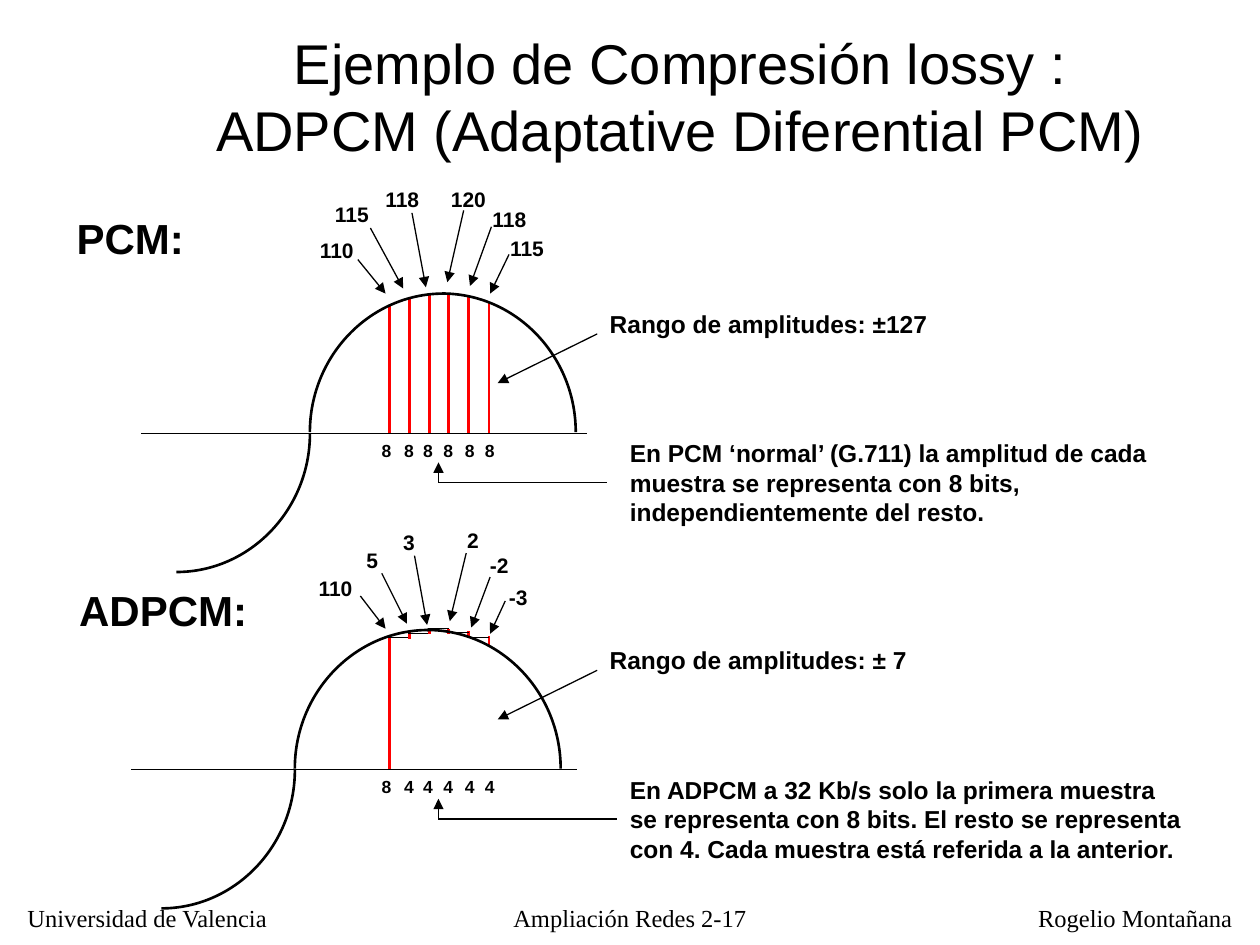
"""Builds a slide that compares PCM and ADPCM sampling."""
from dataclasses import dataclass

from lxml import etree
from pptx import Presentation
from pptx.dml.color import RGBColor
from pptx.enum import shapes, text
from pptx.oxml import ns
from pptx.util import Pt

SCALE = 9144
BLACK = RGBColor(0x00, 0x00, 0x00)
RED = RGBColor(0xFF, 0x00, 0x00)
SANS, SERIF = "Arial", "Times New Roman"
AXIS_Y = 201
SAMPLE_X = [309 + round(15.8 * i) for i in range(6)]
BIT_X = [293, 311, 326, 342, 359, 375]


@dataclass
class Panel:
    """Content of one sampling diagram, in px relative to its box."""
    heading: tuple
    labels: list
    arrows: list
    bars: list
    steps: list
    bits: str
    axis_x: int
    wave_x: int
    callout_end: int
    scope: tuple
    caption: tuple


PCM = Panel(
    heading=("PCM:", 51, 21, 105),
    labels=[("110", 244, 41, 48), ("115", 256, 12, 48), ("118", 296, 0, 48),
            ("120", 348, 0, 48), ("118", 381, 16, 48), ("115", 395, 39, 48)],
    arrows=[(284, 63, 306, 90), (294, 38, 320, 86), (327, 26, 338, 85),
            (368, 24, 355, 81), (390, 37, 373, 84), (404, 59, 389, 90)],
    bars=[(AXIS_Y, top) for top in (100, 93, 91, 91, 93, 97)],
    steps=[],
    bits="888888",
    axis_x=112,
    wave_x=246,
    callout_end=482,
    scope=("Rango de amplitudes: ±127", 449),
    caption=("En PCM ‘normal’ (G.711) la amplitud de cada muestra se representa "
             "con 8 bits, independientemente del resto.", 436),
)
ADPCM = Panel(
    heading=("ADPCM:", 53, 49, 154),
    labels=[("110", 243, 42, 48), ("5", 281, 20, 29), ("3", 310, 5, 29),
            ("2", 361, 4, 29), ("-2", 379, 24, 35), ("-3", 394, 49, 35)],
    arrows=[(286, 63, 306, 89), (303, 45, 323, 85), (329, 31, 339, 86),
            (370, 29, 357, 83), (389, 48, 374, 88), (401, 67, 389, 93)],
    bars=[(AXIS_Y, 95), (97, 91), (93, 90), (93, 89), (96, 91), (103, 95)],
    steps=[96, 93, 89, 92, 96],
    bits="844444",
    axis_x=104,
    wave_x=234,
    callout_end=490,
    scope=("Rango de amplitudes: ± 7", 426),
    caption=("En ADPCM a 32 Kb/s solo la primera muestra se representa con 8 bits. "
             "El resto se representa con 4. Cada muestra está referida a la anterior.", 459),
)


def px(*lengths):
    """Turn px lengths into EMU."""
    return [round(length * SCALE) for length in lengths]


def add_span(para, words, size, font, bold=False):
    """Add one formatted run to a paragraph."""
    span = para.add_run()
    span.text = words
    span.font.size = Pt(size)
    span.font.name = font
    span.font.bold = bold
    span.font.color.rgb = BLACK


def add_text(page, words, box, size, font=SANS, bold=True, wrap=False, align=text.PP_ALIGN.LEFT):
    """Add a text box with a single paragraph."""
    frame = page.shapes.add_textbox(*px(*box)).text_frame
    frame.word_wrap = wrap
    frame.auto_size = text.MSO_AUTO_SIZE.SHAPE_TO_FIT_TEXT
    para = frame.paragraphs[0]
    para.alignment = align
    add_span(para, words, size, font, bold)


def add_line(page, ends, color=BLACK, width=0.75, arrow=False):
    """Add a straight line, with an optional arrowhead at its end."""
    line = page.shapes.add_connector(shapes.MSO_CONNECTOR.STRAIGHT, *px(*ends))
    line.line.color.rgb = color
    line.line.width = Pt(width)
    if arrow:
        etree.SubElement(line.line._get_or_add_ln(), ns.qn("a:tailEnd"), type="triangle")
    etree.SubElement(line._element.spPr, ns.qn("a:effectLst"))


def add_quarter(page, box, turn):
    """Add a curve from top left to bottom right of the box, then turn it."""
    left, top, width, height = px(*box)
    builder = page.shapes.build_freeform(0, 0, scale=1.0)
    builder.add_line_segments([(width, height)], close=False)
    curve = builder.convert_to_shape(left, top)
    segment = curve._element.find(".//" + ns.qn("a:lnTo"))
    segment.tag = ns.qn("a:cubicBezTo")
    handles = [(0.55 * width, 0), (width, 0.45 * height)]
    for i, (x, y) in enumerate(handles):
        point = etree.Element(ns.qn("a:pt"), x=str(round(x)), y=str(round(y)))
        segment.insert(i, point)
    curve.rotation = turn
    curve.fill.background()
    curve.line.color.rgb = BLACK
    curve.line.width = Pt(1.5)
    curve.shadow.inherit = False


def draw_panel(page, box, panel):
    """Draw one sampling diagram with its wave, samples and explanations."""
    left, top = box

    def ends(x1, y1, x2, y2):
        return left + x1, top + y1, left + x2, top + y2

    def place(x, y, width, height):
        return left + x, top + y, width, height

    for x, (bottom, peak) in zip(SAMPLE_X, panel.bars):
        add_line(page, ends(x, bottom, x, peak), RED, 1.5)
    for x, y, width, height, turn in ((-108, 203, 110, 106, 90), (105, 90, 106, 110, 0),
                                      (-2, 92, 110, 106, 270)):
        add_quarter(page, place(panel.wave_x + x, y, width, height), turn)
    add_line(page, ends(panel.axis_x, AXIS_Y, panel.axis_x + 354, AXIS_Y))
    for i, y in enumerate(panel.steps):
        add_line(page, ends(308 + 16 * i, y, 324 + 16 * i, y))

    for arrow in panel.arrows + [(474, 122, 395, 161), (348, 240, 348, 224)]:
        add_line(page, ends(*arrow), arrow=True)
    add_line(page, ends(348, 240, panel.callout_end, 240))

    for words, x, y, width in panel.labels:
        add_text(page, words, place(x, y, width, 30), 12)
    for bit, x in zip(panel.bits, BIT_X):
        add_text(page, bit, place(x, AXIS_Y, 28, 27), 10)
    heading, x, y, width = panel.heading
    add_text(page, heading, place(x, y, width, 50), 24)
    words, width = panel.scope
    add_text(page, words, place(474, 97, width, 33), 14, wrap=True)
    words, width = panel.caption
    add_text(page, words, place(490, 200, width, 80), 14, wrap=True)


def draw_title(page, box):
    """Place and format the title placeholder."""
    title = page.shapes.title
    title.left, title.top, title.width, title.height = px(*box)
    frame = title.text_frame
    frame.word_wrap = True
    frame.auto_size = text.MSO_AUTO_SIZE.NONE
    frame.vertical_anchor = text.MSO_ANCHOR.MIDDLE
    para = frame.paragraphs[0]
    para.alignment = text.PP_ALIGN.CENTER
    add_span(para, "Ejemplo de Compresión lossy : ADPCM (Adaptative Diferential PCM)", 32, SANS)


def draw_footer(page, box):
    """Write the three footer texts along the bottom."""
    left, top, height = box
    for words, x, width, wrap, align in (
            ("Universidad de Valencia", 12, 213, False, text.PP_ALIGN.LEFT),
            ("Ampliación Redes 2-17", 390, 220, True, text.PP_ALIGN.CENTER),
            ("Rogelio Montañana", 814, 174, False, text.PP_ALIGN.LEFT)):
        add_text(page, words, (left + x, top, width, height), 14, SERIF, False, wrap, align)


def main():
    """Build and save the deck."""
    deck = Presentation()
    deck.slide_width, deck.slide_height = px(1000, 750)
    page = deck.slides.add_slide(deck.slide_layouts[5])
    draw_title(page, (146, 28, 788, 96))
    draw_panel(page, (0, 143), PCM)
    draw_panel(page, (0, 410), ADPCM)
    draw_footer(page, (0, 712, 33))
    deck.save("out.pptx")


if __name__ == "__main__":
    main()
